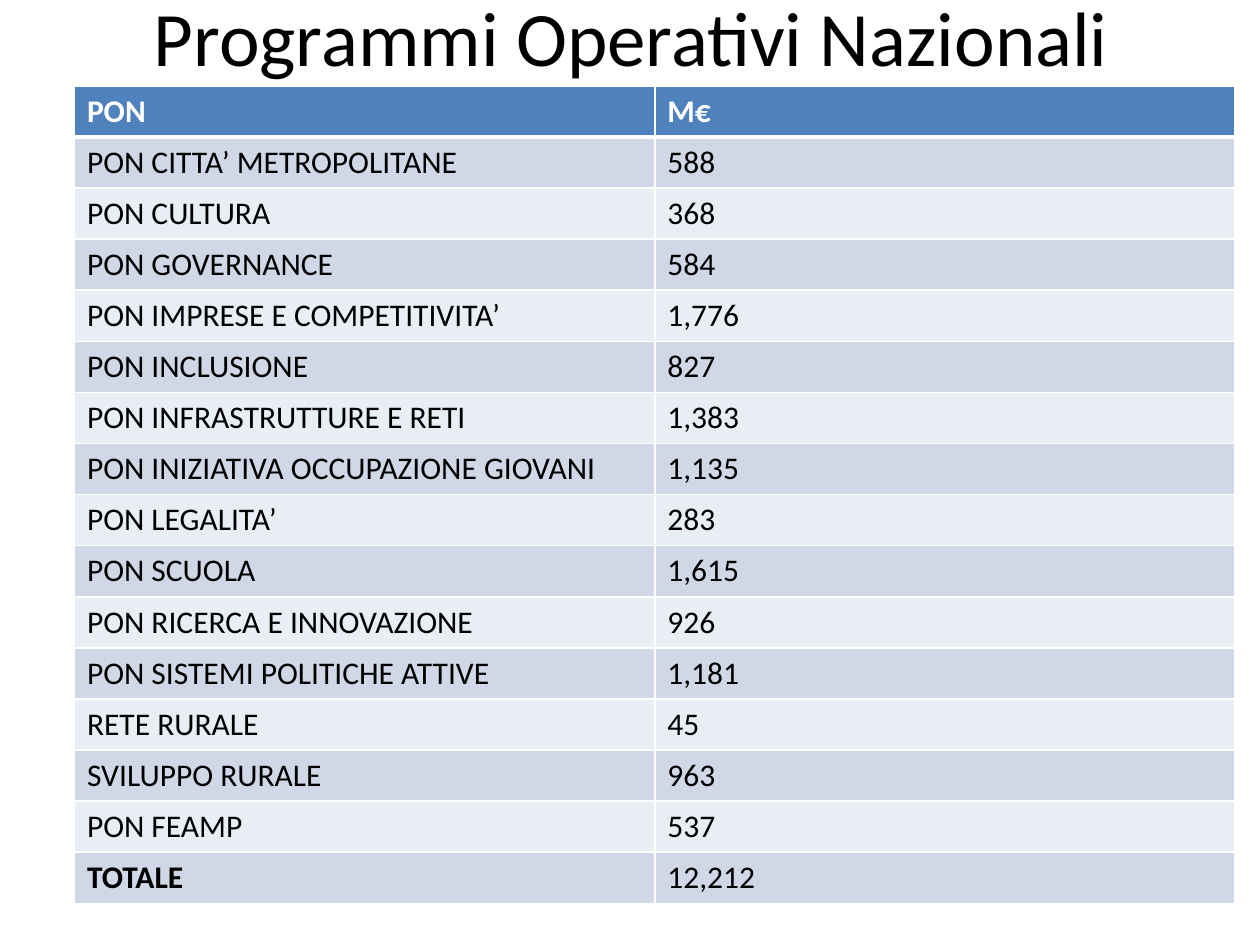
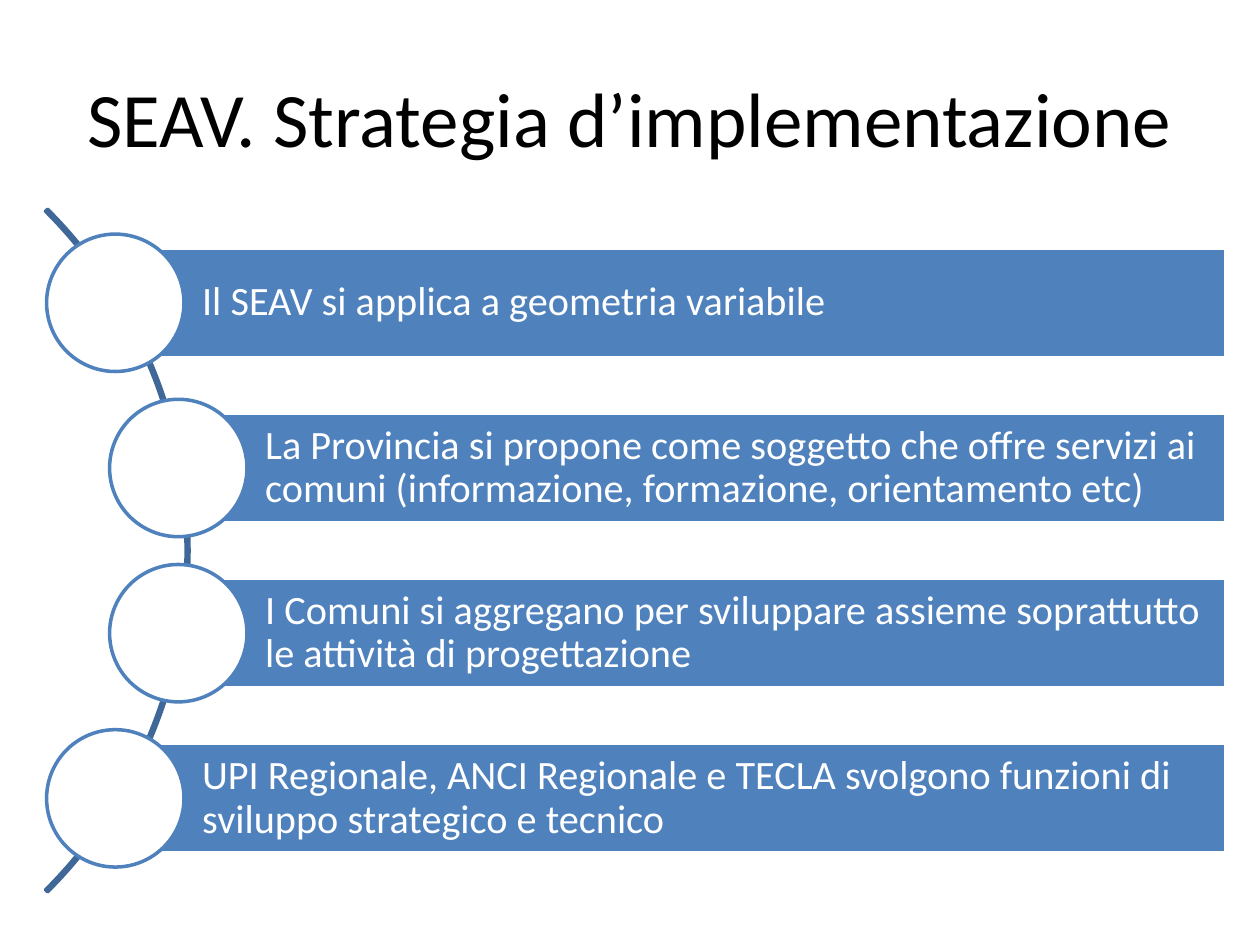
from collections import namedtuple

from lxml.etree import SubElement
from pptx import Presentation
from pptx.dml.color import RGBColor
from pptx.enum.shapes import MSO_SHAPE
from pptx.enum.text import MSO_ANCHOR, PP_ALIGN
from pptx.oxml.ns import qn
from pptx.util import Cm, Pt

Box = namedtuple("Box", "left top width height")

FONT = "Calibri"
BLACK = RGBColor(0x00, 0x00, 0x00)
WHITE = RGBColor(0xFF, 0xFF, 0xFF)
BLUE = RGBColor(0x4F, 0x81, 0xBD)
DARK_BLUE = RGBColor(0x3F, 0x67, 0x97)
BAND_COLORS = (RGBColor(0xD0, 0xD8, 0xE8), RGBColor(0xE9, 0xED, 0xF4))

PROGRAMMES = (
    ("PON", "M€"),
    ("PON CITTA’ METROPOLITANE", "588"),
    ("PON CULTURA", "368"),
    ("PON GOVERNANCE", "584"),
    ("PON IMPRESE E COMPETITIVITA’", "1,776"),
    ("PON INCLUSIONE", "827"),
    ("PON INFRASTRUTTURE E RETI", "1,383"),
    ("PON INIZIATIVA OCCUPAZIONE GIOVANI", "1,135"),
    ("PON LEGALITA’", "283"),
    ("PON SCUOLA", "1,615"),
    ("PON RICERCA E INNOVAZIONE", "926"),
    ("PON SISTEMI POLITICHE ATTIVE", "1,181"),
    ("RETE RURALE", "45"),
    ("SVILUPPO RURALE", "963"),
    ("PON FEAMP", "537"),
    ("TOTALE", "12,212"),
)

STRATEGY_STEPS = (
    "Il SEAV si applica a geometria variabile",
    "La Provincia si propone come soggetto che offre servizi ai comuni "
    "(informazione, formazione, orientamento etc)",
    "I Comuni si aggregano per sviluppare assieme soprattutto le attività "
    "di progettazione",
    "UPI Regionale, ANCI Regionale e TECLA svolgono funzioni di sviluppo "
    "strategico e tecnico",
)


def format_text(text_frame, size, color, bold=False):
    """Apply one font style to every run of a text frame."""
    for paragraph in text_frame.paragraphs:
        for run in paragraph.runs:
            run.font.name = FONT
            run.font.size = Pt(size)
            run.font.bold = bold
            run.font.color.rgb = color


def add_title(slide, box, text):
    """Add a centred slide title."""
    text_frame = slide.shapes.add_textbox(*map(Cm, box)).text_frame
    text_frame.word_wrap = True
    text_frame.vertical_anchor = MSO_ANCHOR.MIDDLE
    text_frame.text = text
    text_frame.paragraphs[0].alignment = PP_ALIGN.CENTER
    format_text(text_frame, 44, BLACK)


def set_cell_borders(cell, top, bottom):
    """Draw white borders, with the given top and bottom widths in points."""
    properties = cell._tc.get_or_add_tcPr()
    for side, width in (("L", 1), ("R", 1), ("T", top), ("B", bottom)):
        line = SubElement(properties, qn(f"a:ln{side}"), w=str(Pt(width)))
        fill = SubElement(line, qn("a:solidFill"))
        SubElement(fill, qn("a:srgbClr"), val=str(WHITE))


def add_programme_table(slide, box, rows):
    """Add a banded table with a blue header row."""
    column_count = len(rows[0])
    table = slide.shapes.add_table(len(rows), column_count, *map(Cm, box)).table
    for column in table.columns:
        column.width = Cm(box.width / column_count)
    for row_index, values in enumerate(rows):
        table.rows[row_index].height = Cm(box.height / len(rows))
        is_header = row_index == 0
        for column_index, value in enumerate(values):
            cell = table.cell(row_index, column_index)
            set_cell_borders(cell, 3 if row_index == 1 else 1, 3 if is_header else 1)
            cell.fill.solid()
            cell.fill.fore_color.rgb = BLUE if is_header else BAND_COLORS[(row_index - 1) % 2]
            cell.text_frame.text = value
            format_text(cell.text_frame, 18, WHITE if is_header else BLACK,
                        is_header or value == "TOTALE")


def add_outlined_shape(slide, kind, box, fill_color, line_color):
    """Add a flat preset shape with a two-point outline."""
    shape = slide.shapes.add_shape(kind, *map(Cm, box))
    shape.shadow.inherit = False
    if fill_color is None:
        shape.fill.background()
    else:
        shape.fill.solid()
        shape.fill.fore_color.rgb = fill_color
    shape.line.color.rgb = line_color
    shape.line.width = Pt(2)
    return shape


def add_strategy_arc(slide, box):
    """Add the thin arc that links the circles, centred on the box height."""
    diameter = 19.46
    right = box.left + 2.87
    top = box.top + (box.height - diameter) / 2
    arc = add_outlined_shape(slide, MSO_SHAPE.BLOCK_ARC,
                             Box(right - diameter, top, diameter, diameter),
                             None, DARK_BLUE)
    for index, value in enumerate((189, 27, 0.003)):
        arc.adjustments[index] = value


def add_strategy_step(slide, box, text):
    """Add a text bar that starts at the centre of a circle on its left."""
    diameter, bar_height = box.height, 2.21
    bar_box = Box(box.left + diameter / 2, box.top + (diameter - bar_height) / 2,
                  box.width - diameter / 2, bar_height)
    bar = add_outlined_shape(slide, MSO_SHAPE.RECTANGLE, bar_box, BLUE, WHITE)
    text_frame = bar.text_frame
    text_frame.word_wrap = True
    text_frame.vertical_anchor = MSO_ANCHOR.MIDDLE
    text_frame.margin_left = Cm(1.75)
    text_frame.margin_right = text_frame.margin_top = text_frame.margin_bottom = Cm(0.15)
    text_frame.text = text
    paragraph = text_frame.paragraphs[0]
    paragraph.alignment = PP_ALIGN.LEFT
    paragraph.line_spacing = 0.9
    format_text(text_frame, 23, WHITE)
    circle_box = Box(box.left, box.top, diameter, diameter)
    add_outlined_shape(slide, MSO_SHAPE.OVAL, circle_box, WHITE, BLUE)


def add_strategy_list(slide, box, steps):
    """Add the steps along the arc, the inner ones shifted to the right."""
    add_strategy_arc(slide, box)
    circle_diameter = 2.77
    pitch = (box.height - circle_diameter) / (len(steps) - 1)
    for index, text in enumerate(steps):
        shift = 0 if index in (0, len(steps) - 1) else 1.27
        step_box = Box(box.left + shift, box.top + index * pitch,
                       box.width - shift, circle_diameter)
        add_strategy_step(slide, step_box, text)


def main():
    """Build and save the presentation."""
    presentation = Presentation()
    presentation.slide_width, presentation.slide_height = Cm(25.4), Cm(19.05)
    blank_layout = presentation.slide_layouts[6]

    slide = presentation.slides.add_slide(blank_layout)
    add_title(slide, Box(1.3, -0.48, 22.86, 2.39), "Programmi Operativi Nazionali")
    add_programme_table(slide, Box(1.5, 1.73, 23.4, 16.48), PROGRAMMES)

    slide = presentation.slides.add_slide(blank_layout)
    add_title(slide, Box(1.27, 0.76, 22.86, 3.18), "SEAV. Strategia d’implementazione")
    add_strategy_list(slide, Box(0.94, 4.72, 23.77, 12.76), STRATEGY_STEPS)

    presentation.save("out.pptx")


if __name__ == "__main__":
    main()
